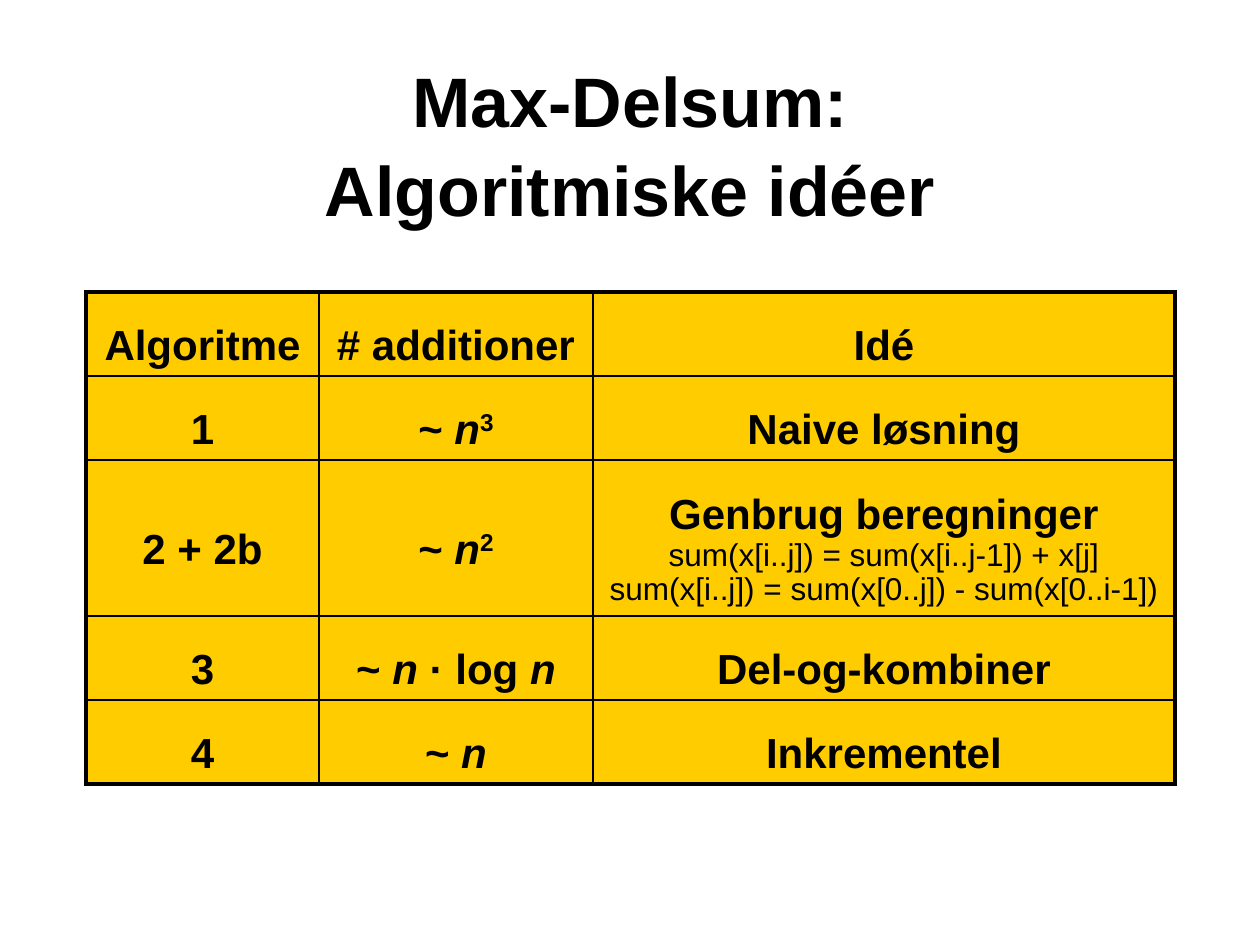
from pptx import Presentation
from pptx.util import Emu, Pt
from pptx.dml.color import RGBColor
from pptx.enum.text import PP_ALIGN as Align, MSO_ANCHOR as Anchor
from pptx.oxml import parse_xml
from pptx.oxml.ns import nsdecls

TITLE = "Max-Delsum:\vAlgoritmiske idéer"
# A cell is a list of paragraphs; a paragraph is a list of (text, style) runs
B, I, SUP, SMALL = "bold", "italic", "super", "small"
ROWS = [
    [[[("Algoritme", B)]], [[("# additioner", B)]], [[("Idé", B)]]],
    [[[("1", B)]], [[("~ ", B), ("n", I), ("3", SUP)]],
     [[("Naive løsning", B)]]],
    [[[("2 + 2b", B)]], [[("~ ", B), ("n", I), ("2", SUP)]],
     [[("Genbrug beregninger", B)],
      [("sum(x[i..j]) = sum(x[i..j-1]) + x[j]", SMALL)],
      [("sum(x[i..j]) = sum(x[0..j]) - sum(x[0..i-1])", SMALL)]]],
    [[[("3", B)]], [[("~ ", B), ("n ", I), ("· log ", B), ("n", I)]],
     [[("Del-og-kombiner", B)]]],
    [[[("4", B)]], [[("~ ", B), ("n", I)]], [[("Inkrementel", B)]]],
]
WIDTHS = [233, 274, 582]
HEIGHTS = [84, 84, 156, 84, 84]
LEFT, TOP = 86, 292
BLACK, GOLD = "000000", "FFCC00"
THIN, THICK = 1, 2.25


def px(n):
    return Emu(n * 914400 // 126)


def rgb(code):
    return RGBColor.from_string(code)


def set_font(par, size, bold):
    font = par.font
    font.name, font.size, font.bold = "Arial", Pt(size), bold
    font.color.rgb = rgb(BLACK)
    par.alignment = Align.CENTER


def border(cell, side, width):
    props = cell._tc.get_or_add_tcPr()
    props.append(parse_xml(
        f'<a:ln{side} {nsdecls("a")} w="{Pt(width)}"><a:solidFill>'
        f'<a:srgbClr val="{BLACK}"/></a:solidFill></a:ln{side}>'))


def fill_text(cell, pars):
    frame = cell.text_frame
    for k, runs in enumerate(pars):
        par = frame.paragraphs[0] if k == 0 else frame.add_paragraph()
        small = runs[0][1] == SMALL
        set_font(par, 18 if small else 24, not small)
        par.line_spacing = 0.97
        for text, style in runs:
            run = par.add_run()
            run.text = text
            if style == I:
                run.font.italic = True
            elif style == SUP:
                run.font._element.set("baseline", "30000")


prs = Presentation()
prs.slide_width, prs.slide_height = px(1260), px(945)
slide = prs.slides.add_slide(prs.slide_layouts[5])

# Title
title = slide.shapes.title
title.left, title.top, title.width, title.height = map(px, (63, 63, 1134, 158))
frame = title.text_frame
frame.text = TITLE
frame.vertical_anchor = Anchor.MIDDLE
set_font(frame.paragraphs[0], 40, True)
frame.paragraphs[0].line_spacing = 1.05

# Table
table = slide.shapes.add_table(
    len(ROWS), len(WIDTHS), px(LEFT), px(TOP),
    px(sum(WIDTHS)), px(sum(HEIGHTS))).table
table.first_row = table.horz_banding = False
for col, width in zip(table.columns, WIDTHS):
    col.width = px(width)
for row, height in zip(table.rows, HEIGHTS):
    row.height = px(height)

# Cells: thick lines on the outer edge, thin lines inside
for r, row in enumerate(ROWS):
    for c, pars in enumerate(row):
        cell = table.cell(r, c)
        fill_text(cell, pars)
        cell.vertical_anchor = Anchor.MIDDLE
        cell.margin_left = cell.margin_right = Pt(7.2)
        cell.margin_top, cell.margin_bottom = Pt(18), Pt(3.6)
        edges = {"L": c == 0, "R": c == len(WIDTHS) - 1,
                 "T": r == 0, "B": r == len(ROWS) - 1}
        for side, outer in edges.items():
            border(cell, side, THICK if outer else THIN)
        cell.fill.solid()
        cell.fill.fore_color.rgb = rgb(GOLD)

prs.save("out.pptx")
